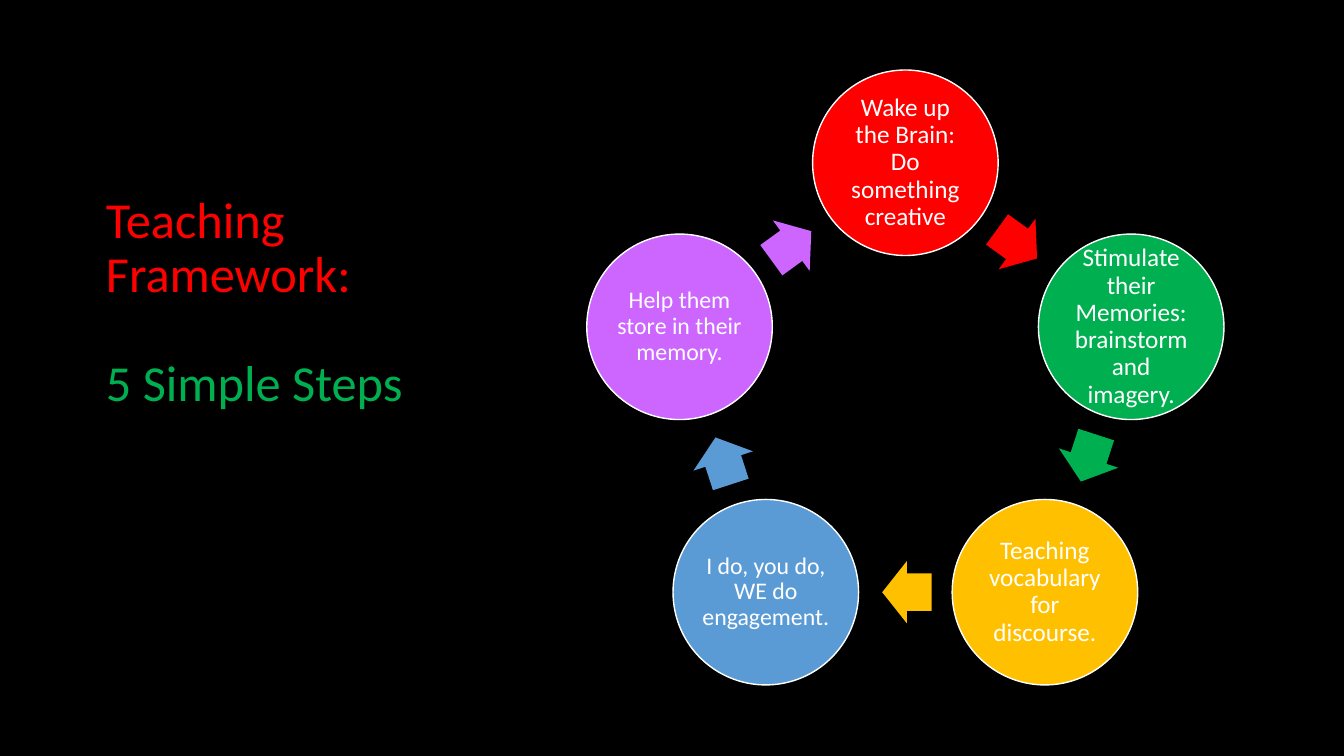
from math import cos, radians, sin

from lxml import etree
from pptx import Presentation
from pptx import util as u
from pptx.dml.color import RGBColor
from pptx.enum import shapes, text

# Content
TITLE = [("Teaching Framework:", "red"), ("5 Simple Steps", "green")]
STEPS = [  # wording, colour, text size in points, inset in inches
    ("Wake up the Brain: Do something creative", "red", 18, 0.03),
    ("Stimulate their Memories: brainstorm and imagery.", "green", 18, 0.03),
    ("Teaching vocabulary for discourse.", "gold", 18, 0.03),
    ("I do, you do, WE do engagement.", "blue", 17, 0.02),
    ("Help them store in their memory.", "violet", 17, 0.02),
]
COLORS = {"black": "000000", "white": "FFFFFF", "red": "FF0000", "green": "00B050",
          "gold": "FFC000", "blue": "5B9BD5", "violet": "CC66FF"}
FONT = "Calibri"

# Cycle geometry, in inches
CENTER_X, CENTER_Y, RADIUS = 8.98, 3.97, 2.355
CIRCLE = 1.84
ARROW_W, ARROW_H = 0.49, 0.62
ARROW_LAG = 0.015  # arrows sit slightly behind the midpoint
STEP_ANGLE = 360 / len(STEPS)


def color(name):
    return RGBColor.from_string(COLORS[name])


def add_run(p, words, size, name):
    r = p.add_run()
    r.text = words
    r.font.name, r.font.size = FONT, u.Pt(size)
    r.font.color.rgb = color(name)


def add_filled(kind, x, y, w, h, name):
    """Add a flat shape centred on x, y."""
    sp = s.shapes.add_shape(kind, u.Inches(x - w / 2), u.Inches(y - h / 2),
                            u.Inches(w), u.Inches(h))
    sp.shadow.inherit = False
    sp.fill.solid()
    sp.fill.fore_color.rgb = color(name)
    return sp


def on_ring(angle, radius):
    """Point at a clockwise angle from the top of the ring."""
    a = radians(angle)
    return CENTER_X + radius * sin(a), CENTER_Y - radius * cos(a)


prs = Presentation()
prs.slide_width, prs.slide_height = u.Inches(13.33), u.Inches(7.5)
s = prs.slides.add_slide(prs.slide_layouts[5])
s.background.fill.solid()
s.background.fill.fore_color.rgb = color("black")

# Title
title = s.shapes.title
title.left, title.top = u.Inches(0.95), u.Inches(1.88)
title.width, title.height = u.Inches(3.39), u.Inches(3.85)
tf = title.text_frame
tf.word_wrap, tf.auto_size = True, text.MSO_AUTO_SIZE.NONE
tf.vertical_anchor = text.MSO_ANCHOR.TOP
for i, (words, name) in enumerate(TITLE):
    p = tf.add_paragraph() if i else tf.paragraphs[0]
    p.alignment, p.line_spacing = text.PP_ALIGN.LEFT, 0.9
    p.space_before = u.Pt(39 if i else 0)
    add_run(p, words, 36, name)

# Cycle: each circle is followed by an arrow of its colour
for i, (words, name, size, inset) in enumerate(STEPS):
    angle = i * STEP_ANGLE
    sp = add_filled(shapes.MSO_SHAPE.OVAL, *on_ring(angle, RADIUS), CIRCLE, CIRCLE, name)
    sp.line.color.rgb, sp.line.width = color("white"), u.Pt(1)
    tf = sp.text_frame
    tf.word_wrap, tf.vertical_anchor = True, text.MSO_ANCHOR.MIDDLE
    tf.margin_left = tf.margin_right = tf.margin_top = tf.margin_bottom = u.Inches(inset)
    p = tf.paragraphs[0]
    p.alignment, p.line_spacing = text.PP_ALIGN.CENTER, 0.9
    add_run(p, words, size, name="white")

    heading = angle + STEP_ANGLE / 2
    x, y = on_ring(heading, RADIUS * cos(radians(STEP_ANGLE / 2)))
    x -= ARROW_LAG * cos(radians(heading))
    y -= ARROW_LAG * sin(radians(heading))
    arrow = add_filled(shapes.MSO_SHAPE.RIGHT_ARROW, x, y, ARROW_W, ARROW_H, name)
    arrow.line.fill.background()
    arrow.adjustments[0], arrow.adjustments[1] = 0.6, 0.5
    arrow.rotation = heading

prs.save("out.pptx")
